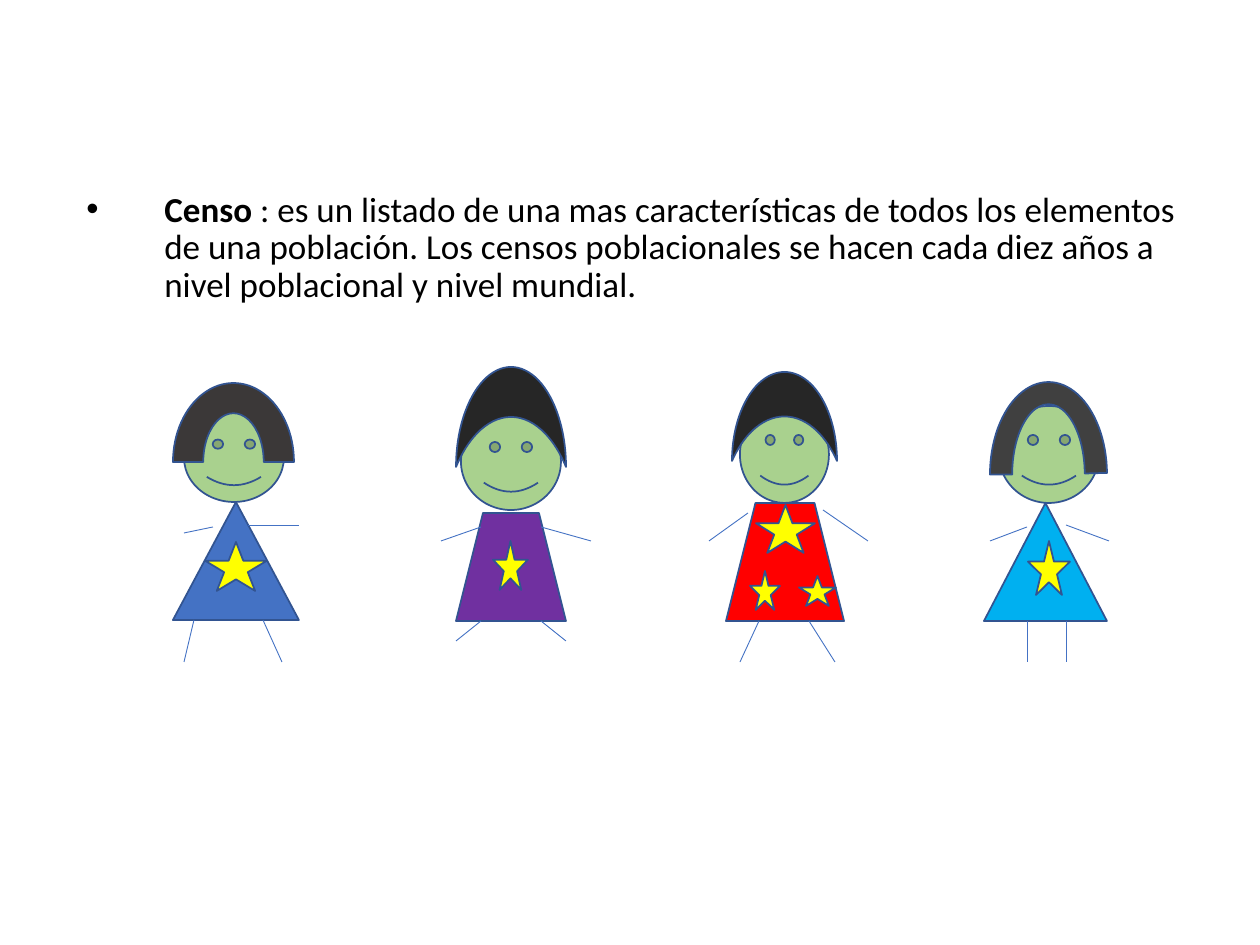
from dataclasses import dataclass

from lxml import etree
from pptx import Presentation
from pptx import util as u
from pptx.dml.color import RGBColor
from pptx.enum import shapes, text
from pptx.oxml import ns

PX = u.Inches(1) / 126
OUTLINE = "325491"
SKIN = "A9D18E"
LIMB = "4472C4"
STAR = "FFFF00"
KIND = shapes.MSO_SHAPE


@dataclass
class Person:
    face: tuple
    hair_kind: int
    hair: tuple
    hair_color: str
    dress_kind: int
    dress: tuple
    dress_color: str
    limbs: list
    stars: list
    hair_adjustments: tuple = ()


PEOPLE = [
    Person(
        (184, 413, 100, 89),
        KIND.BLOCK_ARC, (173, 383, 121, 158), "3B3838",
        KIND.ISOSCELES_TRIANGLE, (173, 502, 126, 118), "4472C4",
        [(213, 527, 184, 533), (248, 525, 299, 525),
         (194, 620, 184, 662), (263, 620, 282, 662)],
        [(205, 542, 62, 49)],
    ),
    Person(
        (461, 413, 100, 97),
        KIND.MOON, (461, 362, 100, 110), "262626",
        KIND.TRAPEZOID, (456, 513, 110, 108), "7030A0",
        [(481, 527, 441, 541), (541, 527, 591, 541),
         (481, 621, 456, 641), (541, 621, 566, 641)],
        [(493, 541, 35, 49)],
    ),
    Person(
        (740, 406, 89, 97),
        KIND.MOON, (740, 364, 89, 105), "262626",
        KIND.TRAPEZOID, (726, 503, 118, 118), "FF0000",
        [(748, 513, 709, 541), (823, 510, 868, 541),
         (759, 621, 740, 662), (809, 621, 835, 662)],
        [(756, 505, 59, 48), (750, 571, 30, 39), (799, 576, 37, 30)],
    ),
    Person(
        (999, 406, 100, 97),
        KIND.BLOCK_ARC, (990, 382, 117, 185), "404040",
        KIND.ISOSCELES_TRIANGLE, (984, 503, 123, 118), "00B0F0",
        [(1027, 527, 990, 541), (1066, 525, 1109, 541),
         (1027, 621, 1027, 662), (1066, 621, 1066, 662)],
        [(1028, 541, 42, 54)],
        (108, 215.08, 0.19),
    ),
]


def px(*lengths):
    return [u.Emu(round(length * PX)) for length in lengths]


def rgb(color):
    return RGBColor.from_string(color)


def add_figure(slide, kind, box, color):
    shape = slide.shapes.add_shape(kind, *px(*box))
    shape.shadow.inherit = False
    shape.fill.solid()
    shape.fill.fore_color.rgb = rgb(color)
    shape.line.color.rgb = rgb(OUTLINE)
    shape.line.width = u.Pt(1)
    return shape


def add_limb(slide, ends):
    connector = slide.shapes.add_connector(shapes.MSO_CONNECTOR.STRAIGHT, *px(*ends))
    connector.line.color.rgb = rgb(LIMB)
    connector.line.width = u.Pt(0.5)
    etree.SubElement(connector._element.spPr, ns.qn("a:effectLst"))


def add_person(slide, person):
    add_figure(slide, KIND.SMILEY_FACE, person.face, SKIN)
    hair = add_figure(slide, person.hair_kind, person.hair, person.hair_color)
    if person.hair_kind == KIND.MOON:
        hair.rotation = 90
    for index, value in enumerate(person.hair_adjustments):
        hair.adjustments[index] = value
    add_figure(slide, person.dress_kind, person.dress, person.dress_color)
    for limb in person.limbs:
        add_limb(slide, limb)
    for star in person.stars:
        add_figure(slide, KIND.STAR_5_POINT, star, STAR)


def add_bullet(paragraph, indent):
    properties = paragraph._p.get_or_add_pPr()
    properties.set("marL", str(indent))
    properties.set("indent", str(-indent))
    etree.SubElement(properties, ns.qn("a:buFont")).set("typeface", "Arial")
    etree.SubElement(properties, ns.qn("a:buChar")).set("char", "•")


def add_definition(slide, box, term, definition):
    frame = slide.shapes.add_textbox(*px(*box)).text_frame
    frame.word_wrap = True
    frame.vertical_anchor = text.MSO_ANCHOR.MIDDLE
    paragraph = frame.paragraphs[0]
    paragraph.line_spacing = 0.9
    add_bullet(paragraph, px(78)[0])
    paragraph.font.name = "Calibri"
    paragraph.font.size = u.Pt(20)
    paragraph.font.color.rgb = rgb("000000")
    for words, bold in ((term, True), (definition, False)):
        run = paragraph.add_run()
        run.text = words
        run.font.bold = bold


def main():
    presentation = Presentation()
    presentation.slide_width, presentation.slide_height = px(1260, 945)
    slide = presentation.slides.add_slide(presentation.slide_layouts[6])
    add_definition(
        slide, (74, 55, 1134, 387), "Censo ",
        ": es un listado de una mas características de todos los elementos "
        "de una población. Los censos poblacionales se hacen cada diez años a "
        "nivel poblacional y nivel mundial.",
    )
    for person in PEOPLE:
        add_person(slide, person)
    presentation.save("out.pptx")


if __name__ == "__main__":
    main()
